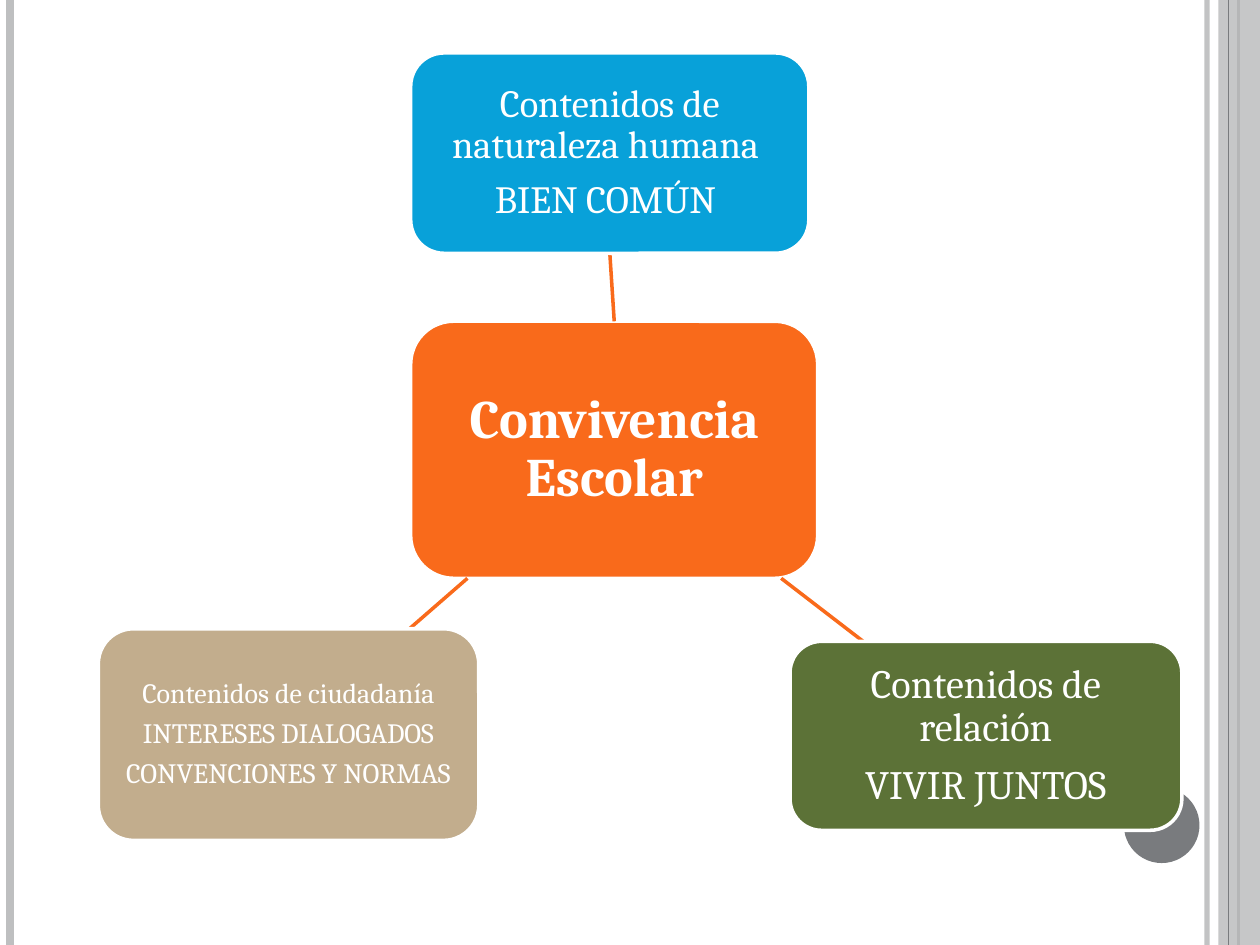
from dataclasses import dataclass
from typing import Optional

from lxml import etree
from pptx import Presentation
from pptx.dml.color import RGBColor
from pptx.enum import shapes, text
from pptx.oxml import ns
from pptx.util import Inches, Pt


@dataclass(frozen=True)
class Theme:
    font: str = "Cambria"
    white: str = "FFFFFF"
    orange: str = "F96A1B"
    blue: str = "08A1D9"
    green: str = "5C7237"
    tan: str = "C2AD8D"
    light_gray: str = "BEBFC0"
    dark_gray: str = "797B7E"
    hub_size: int = 31
    green_size: int = 23
    blue_size: int = 22
    tan_size: int = 16
    outline: float = 2
    line_spacing: float = 0.9
    space_after: float = 0.35


@dataclass(frozen=True)
class Rule:
    x: float
    color: str
    weight: float
    opacity: int = 100


@dataclass(frozen=True)
class Box:
    left: float
    top: float
    width: float
    height: float
    color: str
    size: int
    inset: float
    lines: tuple[str, ...]
    bold: bool = False


@dataclass(frozen=True)
class Link:
    start: tuple[float, float]
    end: tuple[float, float]
    # Connection sites on the hub and on the topic box
    sites: Optional[tuple[int, int]] = None


THEME = Theme()

RULES = (
    Rule(9.58, THEME.light_gray, 3, 93),
    Rule(0.08, THEME.light_gray, 4.5),
    Rule(9.83, THEME.dark_gray, 1.5),
)
BAND_RULE = Rule(9.75, THEME.dark_gray, 0.75)

HUB = Box(3.26, 2.55, 3.23, 2.04, THEME.orange, THEME.hub_size, 0.19,
          ("Convivencia Escolar",), bold=True)

TOPICS = (
    (Link((4.87, 2.55), (4.84, 2.01), (0, 2)),
     Box(3.26, 0.42, 3.16, 1.59, THEME.blue, THEME.blue_size, 0.14,
         ("Contenidos de naturaleza humana ", "BIEN COMÚN "))),
    (Link((6.2, 4.59), (6.85, 5.09)),
     Box(6.27, 5.09, 3.11, 1.5, THEME.green, THEME.green_size, 0.13,
         ("Contenidos de relación", "VIVIR JUNTOS"))),
    (Link((3.71, 4.59), (3.25, 4.99)),
     Box(0.78, 4.99, 3.02, 1.68, THEME.tan, THEME.tan_size, 0.12,
         ("Contenidos de ciudadanía", "INTERESES DIALOGADOS",
          "CONVENCIONES Y NORMAS"))),
)


def set_opacity(fill, percent: int) -> None:
    """Add an alpha value to the solid colour inside a shape or line element."""
    color = next(fill.iter(ns.qn("a:srgbClr")))
    etree.SubElement(color, ns.qn("a:alpha"), val=str(percent * 1000))


def add_line(slide, start, end, color: str, weight: float, opacity: int = 100):
    points = [Inches(v) for v in (*start, *end)]
    line = slide.shapes.add_connector(shapes.MSO_CONNECTOR.STRAIGHT, *points)
    line.line.color.rgb = RGBColor.from_string(color)
    line.line.width = Pt(weight)
    properties = line._element.spPr
    if opacity < 100:
        set_opacity(properties, opacity)
    etree.SubElement(properties, ns.qn("a:effectLst"))
    return line


def add_rule(slide, rule: Rule) -> None:
    add_line(slide, (rule.x, 0), (rule.x, 7.5), rule.color, rule.weight, rule.opacity)


def add_filled(slide, kind, left: float, top: float, width: float, height: float,
               color: str):
    sp = slide.shapes.add_shape(kind, *map(Inches, (left, top, width, height)))
    sp.shadow.inherit = False
    sp.fill.solid()
    sp.fill.fore_color.rgb = RGBColor.from_string(color)
    sp.line.fill.background()
    return sp


def add_box(slide, box: Box):
    sp = add_filled(slide, shapes.MSO_SHAPE.ROUNDED_RECTANGLE, box.left, box.top,
                    box.width, box.height, box.color)
    sp.line.color.rgb = RGBColor.from_string(THEME.white)
    sp.line.width = Pt(THEME.outline)
    tf = sp.text_frame
    tf.word_wrap = True
    tf.vertical_anchor = text.MSO_ANCHOR.MIDDLE
    # The rounded corners already inset the text, so square off that share
    corner = 0.29289 * 0.16667 * min(box.width, box.height)
    margin = Inches(max(0, round(box.inset - corner, 2)))
    tf.margin_left = tf.margin_right = tf.margin_top = tf.margin_bottom = margin
    for i, line in enumerate(box.lines):
        p = tf.paragraphs[0] if i == 0 else tf.add_paragraph()
        p.alignment = text.PP_ALIGN.CENTER
        p.line_spacing = THEME.line_spacing
        p.space_after = Pt(round(box.size * THEME.space_after, 1))
        r = p.add_run()
        r.text = line
        r.font.name = THEME.font
        r.font.size = Pt(box.size)
        r.font.bold = box.bold
        r.font.color.rgb = RGBColor.from_string(THEME.white)
    return sp


def add_topic(slide, hub, link: Link, box: Box) -> None:
    """Draw the link first so that the box's white outline covers its end."""
    line = add_line(slide, link.start, link.end, THEME.orange, THEME.outline)
    sp = add_box(slide, box)
    if link.sites:
        line.begin_connect(hub, link.sites[0])
        line.end_connect(sp, link.sites[1])


def add_frame(slide) -> None:
    for rule in RULES:
        add_rule(slide, rule)
    band = add_filled(slide, shapes.MSO_SHAPE.RECTANGLE, 9.67, 0, 0.33, 7.5,
                      THEME.light_gray)
    set_opacity(band._element.spPr, 87)
    add_rule(slide, BAND_RULE)
    add_filled(slide, shapes.MSO_SHAPE.OVAL, 8.92, 6.25, 0.6, 0.6, THEME.dark_gray)


def main() -> None:
    prs = Presentation()
    prs.slide_width, prs.slide_height = Inches(10), Inches(7.5)
    slide = prs.slides.add_slide(prs.slide_layouts[6])
    add_frame(slide)
    hub = add_box(slide, HUB)
    for link, box in TOPICS:
        add_topic(slide, hub, link, box)
    prs.save("out.pptx")


if __name__ == "__main__":
    main()
